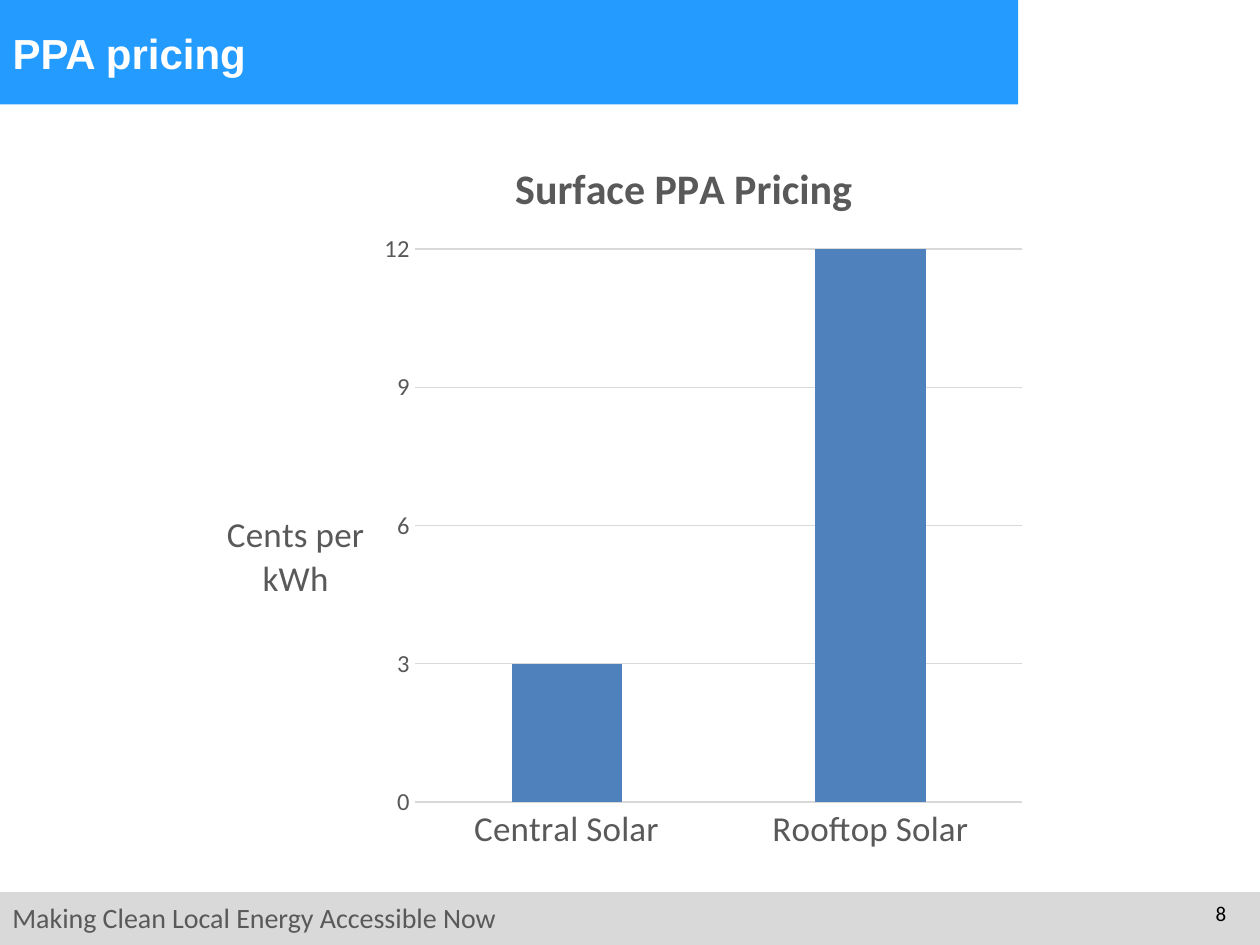
import lxml.etree
import pptx
import pptx.chart.data
import pptx.dml.color
import pptx.enum.chart
import pptx.enum.shapes
import pptx.enum.text
import pptx.oxml.ns
import pptx.util

Inches = pptx.util.Inches
Pt = pptx.util.Pt
qn = pptx.oxml.ns.qn
Align = pptx.enum.text.PP_ALIGN
Anchor = pptx.enum.text.MSO_ANCHOR


def color(value):
    return pptx.dml.color.RGBColor.from_string(value)


def place(element, **fractions):
    """Give a chart part a fixed layout in fractions of the chart's size."""
    layout = element.find(qn("c:layout"))
    if layout is None:
        layout = lxml.etree.Element(qn("c:layout"))
        text = element.find(qn("c:tx"))
        if text is None:
            element.insert(0, layout)
        else:
            text.addnext(layout)
    manual = lxml.etree.SubElement(layout, qn("c:manualLayout"))
    settings = {"xMode": "edge", "yMode": "edge", **fractions}
    if "w" in fractions:
        settings = {"layoutTarget": "inner", **settings}
    for name, value in settings.items():
        lxml.etree.SubElement(manual, qn("c:" + name)).set("val", str(value))


class SlideBuilder:
    body_font = "Calibri"
    title_font = "Arial"
    blue = "249CFF"
    bar_blue = "4F81BD"
    light_gray = "D9D9D9"
    dark_gray = "595959"

    def __init__(self, deck):
        self.page = deck.slides.add_slide(deck.slide_layouts[5])

    def style(self, font, size, hue, bold=False, name=None):
        font.name = name or self.body_font
        font.size = Pt(size)
        font.bold = bold
        font.color.rgb = color(hue)

    def add_text(self, frame, text, size, hue, align=Align.LEFT, **options):
        para = frame.paragraphs[0]
        para.alignment = align
        span = para.add_run()
        span.text = text
        self.style(span.font, size, hue, **options)

    def band(self, left, top, width, height, hue):
        shape = self.page.shapes.add_shape(
            pptx.enum.shapes.MSO_SHAPE.RECTANGLE,
            Inches(left), Inches(top), Inches(width), Inches(height))
        shape.shadow.inherit = False
        shape.fill.solid()
        shape.fill.fore_color.rgb = color(hue)
        shape.line.fill.background()

    def label(self, left, top, width, height, text, size, hue, align=Align.LEFT):
        box = self.page.shapes.add_textbox(
            Inches(left), Inches(top), Inches(width), Inches(height))
        box.text_frame.word_wrap = True
        self.add_text(box.text_frame, text, size, hue, align)

    def title(self, left, top, width, height, text):
        box = self.page.shapes.title
        box.left, box.top = Inches(left), Inches(top)
        box.width, box.height = Inches(width), Inches(height)
        box.text_frame.vertical_anchor = Anchor.MIDDLE
        self.add_text(box.text_frame, text, 24, "FFFFFF", bold=True,
                      name=self.title_font)
        # Bring the title in front of the bands.
        self.page.shapes._spTree.append(box._element)

    def chart_line(self, line):
        line.color.rgb = color(self.light_gray)
        line.width = Pt(0.75)

    def column_chart(self, left, top, width, height, heading, unit, values):
        data = pptx.chart.data.CategoryChartData()
        data.categories = list(values)
        data.add_series("Series 1", list(values.values()))
        chart = self.page.shapes.add_chart(
            pptx.enum.chart.XL_CHART_TYPE.COLUMN_STACKED,
            Inches(left), Inches(top), Inches(width), Inches(height), data).chart
        self.style(chart.font, 10, "000000")
        chart.has_legend = False
        chart.has_title = True
        self.add_text(chart.chart_title.text_frame, heading, 24, self.dark_gray,
                      Align.CENTER, bold=True)
        place(chart.chart_title._element, x=0.37, y=0.04)
        place(chart._chartSpace.chart.plotArea, x=0.26, y=0.17, w=0.72, h=0.74)

        plot = chart.plots[0]
        plot.gap_width = 176
        plot.overlap = 100
        plot.vary_by_categories = False
        fill = plot.series[0].format.fill
        fill.solid()
        fill.fore_color.rgb = color(self.bar_blue)

        for axis, size in ((chart.category_axis, 20), (chart.value_axis, 14)):
            axis.major_tick_mark = pptx.enum.chart.XL_TICK_MARK.NONE
            axis.minor_tick_mark = pptx.enum.chart.XL_TICK_MARK.NONE
            self.style(axis.tick_labels.font, size, self.dark_gray)
        self.chart_line(chart.category_axis.format.line)

        axis = chart.value_axis
        axis.minimum_scale, axis.maximum_scale, axis.major_unit = 0, 12, 3
        axis.format.line.fill.background()
        axis.has_major_gridlines = True
        self.chart_line(axis.major_gridlines.format.line)
        frame = axis.axis_title.text_frame
        self.add_text(frame, unit, 20, self.dark_gray, Align.CENTER)
        frame._txBody.bodyPr.set("rot", "0")
        frame._txBody.bodyPr.set("vert", "horz")
        place(axis.axis_title._element, x=0.03, y=0.51)


def main():
    deck = pptx.Presentation()
    deck.slide_width, deck.slide_height = Inches(10), Inches(7.5)
    slide = SlideBuilder(deck)
    slide.band(0, 7.08, 10, 0.42, slide.light_gray)
    slide.label(0, 7.1, 5.17, 0.37, "Making Clean Local Energy Accessible Now",
                16, slide.dark_gray)
    slide.band(0, 0, 8.08, 0.83, slide.blue)
    slide.label(9.33, 7.1, 0.5, 0.4, "8", 12, "000000", Align.RIGHT)
    slide.title(0, 0, 8, 0.83, "PPA pricing")
    slide.column_chart(1.55, 0.97, 6.7, 5.93, "Surface PPA Pricing",
                       "Cents per kWh", {"Central Solar": 3, "Rooftop Solar": 12})
    deck.save("out.pptx")


if __name__ == "__main__":
    main()
